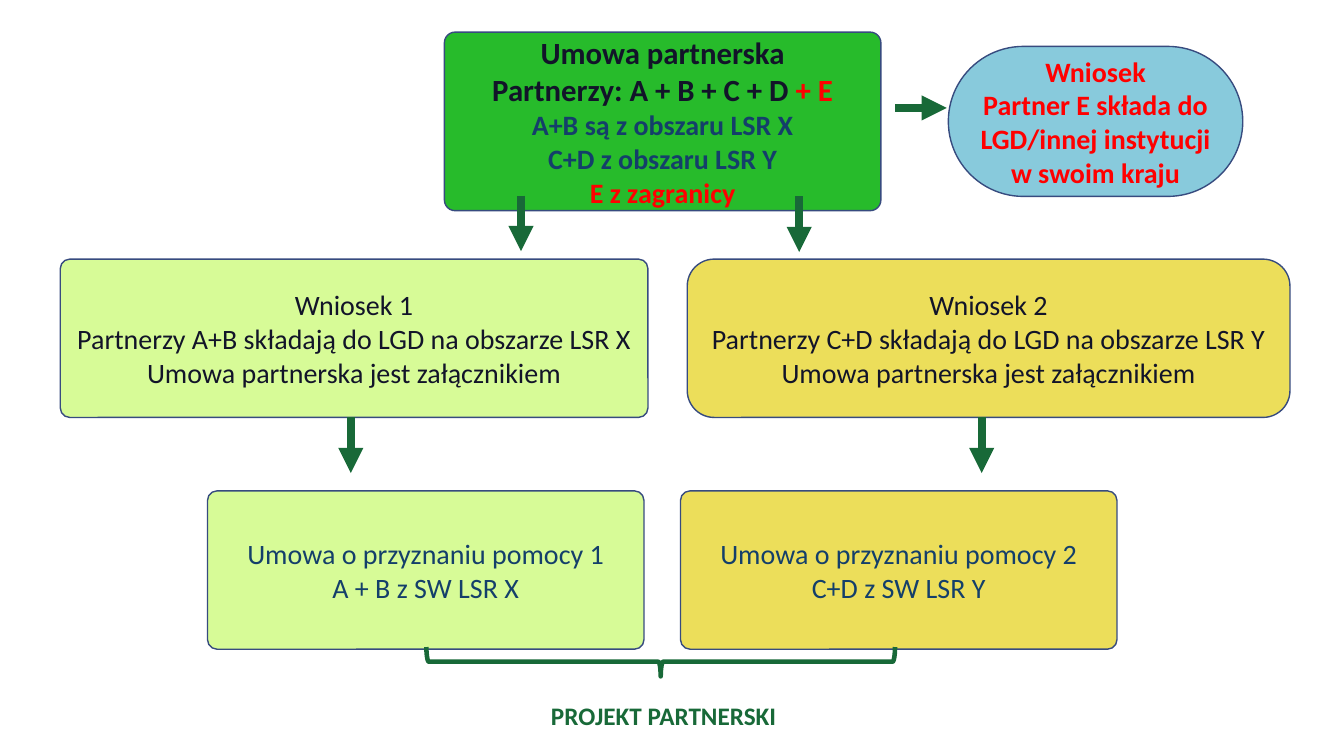
import dataclasses

import lxml.etree
import pptx
import pptx.dml.color
import pptx.enum.shapes
import pptx.enum.text
import pptx.oxml.ns
import pptx.util

Cm = pptx.util.Cm
Pt = pptx.util.Pt
RGB = pptx.dml.color.RGBColor.from_string
SHAPE = pptx.enum.shapes.MSO_SHAPE
ANCHOR = pptx.enum.text.MSO_ANCHOR
qn = pptx.oxml.ns.qn


@dataclasses.dataclass(frozen=True)
class Theme:
    font: str = "Calibri"
    ink: str = "121429"
    navy: str = "143F6A"
    red: str = "FF0000"
    forest: str = "186938"
    outline: str = "374B7F"
    green: str = "27BB2B"
    lime: str = "D7FB97"
    blue: str = "88CADC"
    yellow: str = "ECDE5A"
    heading: int = 22
    text: int = 20
    caption: int = 18


theme = Theme()


def write(paragraph, text, size=theme.text, color=theme.ink, bold=False):
    paragraph.alignment = pptx.enum.text.PP_ALIGN.CENTER
    run = paragraph.add_run()
    run.text = text
    run.font.name = theme.font
    run.font.size = Pt(size)
    run.font.bold = bold
    run.font.color.rgb = RGB(color)


deck = pptx.Presentation()
deck.slide_width, deck.slide_height = Cm(33.87), Cm(19.05)
slide = deck.slides.add_slide(deck.slide_layouts[5])

# Boxes: place, corner, fill, then lines made of (text, format) pieces
heading = dict(size=theme.heading, bold=True)
navy = dict(color=theme.navy)
navy_bold = dict(color=theme.navy, bold=True)
red_bold = dict(color=theme.red, bold=True)
small_corner, box_width, box_height = 0.06, 11, 3.99
application_top, grant_top = 6.53, 12.37

boxes = [
    ((11.2, 0.81, box_width, 4.5), small_corner, theme.green, [
        [("Umowa partnerska", heading)],
        [("Partnerzy: A + B + C + D ", heading),
         ("+ E", dict(heading, color=theme.red))],
        [("A+B są z obszaru LSR X", navy_bold)],
        [("C+D z obszaru LSR Y", navy_bold)],
        [("E z zagranicy", red_bold)],
    ]),
    ((23.9, 1.17, 7.42, 3.78), 0.5, theme.blue, [
        [("Wniosek", red_bold)],
        [("Partner E składa do LGD/innej instytucji w swoim kraju", red_bold)],
    ]),
]

branches = [
    (1, "A+B", "A + B", "X", theme.lime, small_corner, (1.52, 14.81), 5.23),
    (2, "C+D", "C+D", "Y", theme.yellow, 0.17, (17.32, 15.19), 17.15),
]
for number, partners, parties, area, fill, corner, (left, width), grant_left in branches:
    boxes.append(((left, application_top, width, box_height), corner, fill, [
        [(f"Wniosek {number}", {})],
        [(f"Partnerzy {partners} składają do LGD na obszarze LSR {area}", {})],
        [("Umowa partnerska jest załącznikiem", {})],
    ]))
    boxes.append(((grant_left, grant_top, box_width, box_height), small_corner, fill, [
        [(f"Umowa o przyznaniu pomocy {number}", navy)],
        [(f"{parties} z SW LSR {area}", navy)],
    ]))

for place, corner, fill, lines in boxes:
    box = slide.shapes.add_shape(SHAPE.ROUNDED_RECTANGLE, *map(Cm, place))
    box.adjustments[0] = corner
    box.shadow.inherit = False
    box.fill.solid()
    box.fill.fore_color.rgb = RGB(fill)
    box.line.color.rgb = RGB(theme.outline)
    box.line.width = Pt(1)
    frame = box.text_frame
    frame.word_wrap = True
    frame.vertical_anchor = ANCHOR.MIDDLE
    for index, pieces in enumerate(lines):
        paragraph = frame.add_paragraph() if index else frame.paragraphs[0]
        for text, style in pieces:
            write(paragraph, text, **style)

# Arrows: start point, then run across and down
drop = 1.4
arrows = [
    (13.13, 4.93, 0, drop),
    (20.14, 4.95, 0, drop),
    (8.84, 10.52, 0, drop),
    (24.74, 10.52, 0, drop),
    (22.56, 2.72, 1.3, 0),
]
for x, y, across, down in arrows:
    arrow = slide.shapes.add_connector(
        pptx.enum.shapes.MSO_CONNECTOR.STRAIGHT,
        Cm(x), Cm(y), Cm(x + across), Cm(y + down))
    arrow.line.color.rgb = RGB(theme.forest)
    arrow.line.width = Pt(6)
    properties = arrow.element.spPr
    lxml.etree.SubElement(properties.find(qn("a:ln")), qn("a:tailEnd"), type="triangle")
    lxml.etree.SubElement(properties, qn("a:effectLst"))

# Brace joining both grant agreements
brace = slide.shapes.add_shape(
    SHAPE.RIGHT_BRACE, Cm(16.28), Cm(10.77), Cm(0.74), Cm(11.81))
brace.rotation = 90
brace.shadow.inherit = False
brace.fill.background()
brace.line.color.rgb = RGB(theme.forest)
brace.line.width = Pt(3.25)

# Project title under the brace
project = slide.shapes.title
project.left, project.top, project.width, project.height = map(
    Cm, (11.53, 17.53, 10.39, 1.02))
project.text_frame.vertical_anchor = ANCHOR.TOP
write(project.text_frame.paragraphs[0], "PROJEKT PARTNERSKI",
      size=theme.caption, color=theme.forest, bold=True)

deck.save("out.pptx")
